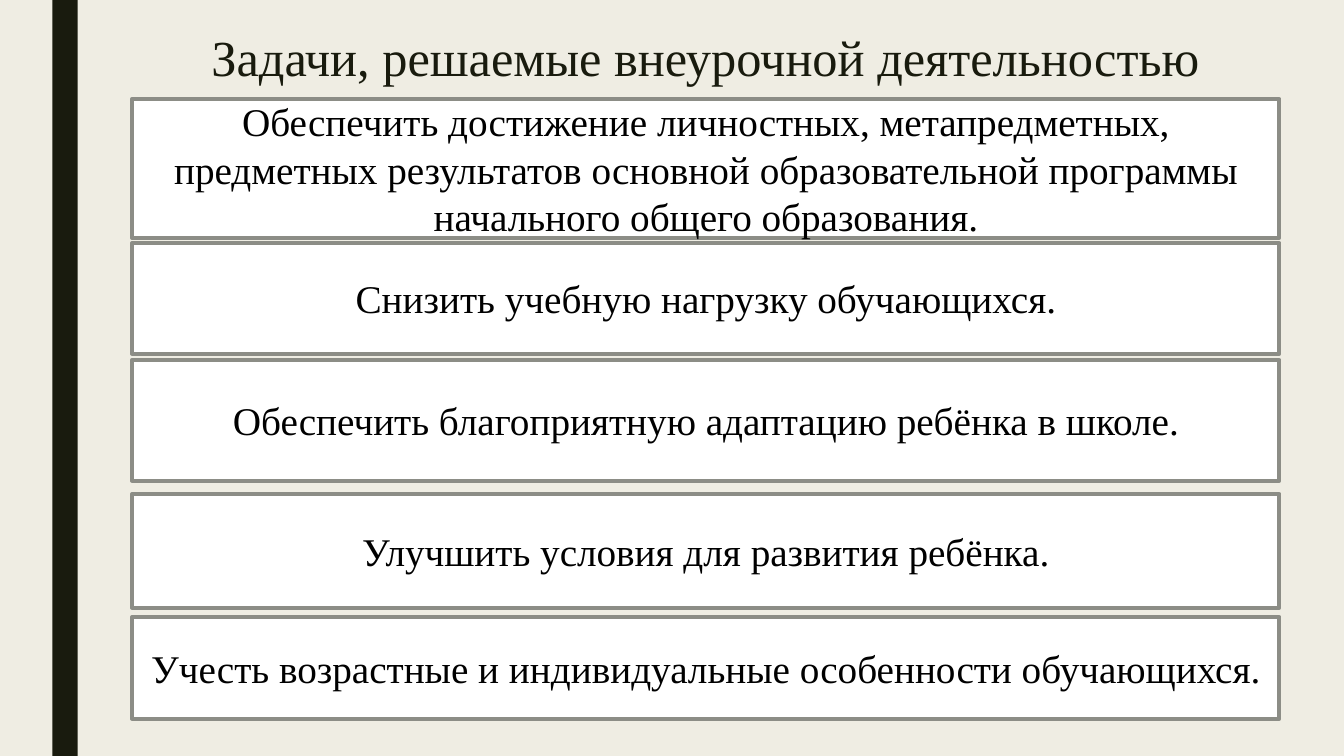
from pptx import Presentation
from pptx.dml.color import RGBColor
from pptx.enum.shapes import MSO_SHAPE
from pptx.enum.text import MSO_ANCHOR, MSO_AUTO_SIZE, PP_ALIGN
from pptx.util import Inches, Pt

COLORS = {"paper": "EFEDE3", "dark": "191B0E", "box": "FFFFFF",
          "border": "8C8D86", "text": "000000"}
RGB = {name: RGBColor.from_string(value) for name, value in COLORS.items()}
FONT = "Times New Roman"

# Task text with the top and height of its row, in inches
TASKS = [
    ("Обеспечить достижение личностных, метапредметных, предметных результатов "
     "основной образовательной программы начального общего образования.", 0.98, 1.38),
    ("Снизить учебную нагрузку обучающихся.", 2.41, 1.1),
    ("Обеспечить благоприятную адаптацию ребёнка в школе.", 3.57, 1.2),
    ("Улучшить условия для развития ребёнка.", 4.9, 1.13),
    ("Учесть возрастные и индивидуальные особенности обучающихся.", 6.12, 1.01),
]
TASK_LEFT, TASK_WIDTH = Inches(1.31), Inches(11.38)


def write(frame, text, anchor, size, color):
    frame.text = text
    layout = {"word_wrap": True, "auto_size": MSO_AUTO_SIZE.NONE,
              "vertical_anchor": anchor}
    for key, value in layout.items():
        setattr(frame, key, value)
    paragraph = frame.paragraphs[0]
    paragraph.alignment = PP_ALIGN.CENTER
    font = paragraph.runs[0].font
    for key, value in {"name": FONT, "size": Pt(size)}.items():
        setattr(font, key, value)
    font.color.rgb = RGB[color]
    return paragraph


def add_box(left, top, width, height, color):
    box = slide.shapes.add_shape(MSO_SHAPE.RECTANGLE, left, top, width, height)
    box.shadow.inherit = False
    box.fill.solid()
    box.fill.fore_color.rgb = RGB[color]
    return box


# Slide and background
deck = Presentation()
deck.slide_width, deck.slide_height = Inches(13.33), Inches(7.5)
slide = deck.slides.add_slide(deck.slide_layouts[5])
slide.background.fill.solid()
slide.background.fill.fore_color.rgb = RGB["paper"]

# Dark stripe on the left
stripe = add_box(Inches(0.52), 0, Inches(0.25), deck.slide_height, "dark")
stripe.line.fill.background()

# Heading
heading = slide.shapes.title
place = {"left": 1.05, "top": 0.28, "width": 11.9, "height": 0.98}
for side, inches in place.items():
    setattr(heading, side, Inches(inches))
heading_line = write(heading.text_frame, "Задачи, решаемые внеурочной деятельностью",
                     MSO_ANCHOR.TOP, 36, "dark")
heading_line.line_spacing = 0.89

# Task boxes
for text, top, height in TASKS:
    task = add_box(TASK_LEFT, Inches(top), TASK_WIDTH, Inches(height), "box")
    task.line.color.rgb = RGB["border"]
    task.line.width = Pt(2.75)
    write(task.text_frame, text, MSO_ANCHOR.MIDDLE, 28, "text")

deck.save("out.pptx")
